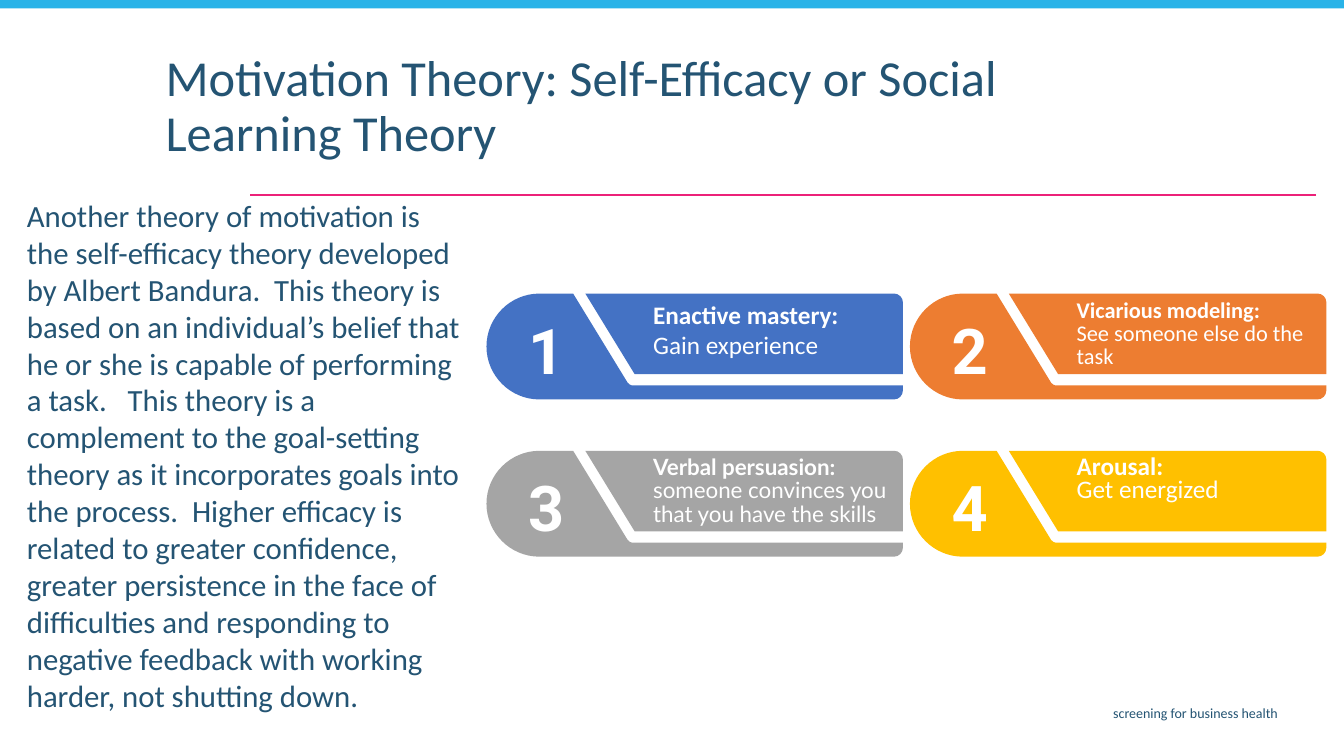
import dataclasses

import pptx
import pptx.dml.color
import pptx.enum.shapes
import pptx.enum.text
import pptx.oxml.ns
import pptx.util
from lxml import etree

# The slide is a grid of 160 columns by 90 rows of square cells
COLUMNS, ROWS = 160, 90
SLIDE_WIDTH, SLIDE_HEIGHT = pptx.util.Inches(13.33), pptx.util.Inches(7.5)
CELL = SLIDE_HEIGHT / ROWS
NAVY, SKY, PINK, WHITE = "245473", "29B3E8", "EC2179", "FFFFFF"
ALIGN = pptx.enum.text.PP_ALIGN

# Cards, in cells
CARD_LEFT, CARD_TOP = 57.9, 34.95
COLUMN_PITCH, ROW_PITCH = 50.4, 18.72
CARD_WIDTH, CARD_HEIGHT = 49.56, 12.6
CORNER = 1.05
CURVE = 0.55  # share of a quarter circle's radius taken by its control points

Point = tuple[float, float]
Segment = list[Point]  # one point for a line, three for a curve


@dataclasses.dataclass
class TextBox:
    left: float
    top: float
    width: float
    height: float
    runs: list[tuple[str, bool]]  # one run a line: text, bold
    size: float
    font: str = "Calibri"
    color: str = NAVY
    align: ALIGN = ALIGN.LEFT
    line_spacing: float | pptx.util.Length | None = None
    wrap: bool = True


@dataclasses.dataclass
class Card:
    heading: str
    detail: str
    color: str
    size: float
    font: str = "Calibri"
    line_spacing: pptx.util.Length | None = pptx.util.Pt(16.6)
    text_width: float = 29.4


TEXTS = [
    TextBox(43.7, 83.28, 109.56, 3.48, [("screening for business health", False)], 10,
            align=ALIGN.RIGHT),
    TextBox(18.52, 5.76, 123, 9.12,
            [("Motivation Theory: Self-Efficacy or Social Learning Theory", False)],
            36, line_spacing=0.9),
    TextBox(2.02, 22.8, 54.7, 63.24, [(
        "Another theory of motivation is the self-efficacy theory developed by Albert "
        "Bandura.  This theory is based on an individual’s belief that he or she is "
        "capable of performing a task.   This theory is a complement to the goal-setting "
        "theory as it incorporates goals into the process.  Higher efficacy is related to "
        "greater confidence, greater persistence in the face of difficulties and "
        "responding to negative feedback with working harder, not shutting down.",
        False)], 22),
]

CARDS = [
    Card("Enactive mastery:", "Gain experience", "4472C4", 18, line_spacing=None),
    Card("Vicarious modeling:", "See someone else do the task", "ED7D31", 16),
    Card("Verbal persuasion:", "someone convinces you that you have the skills",
         "A5A5A5", 16, font="Lato", text_width=32.4),
    Card("Arousal:", "Get energized", "FFC000", 18),
]


def cells(count: float) -> pptx.util.Emu:
    return pptx.util.Emu(round(count * CELL))


def rgb(color: str) -> pptx.dml.color.RGBColor:
    return pptx.dml.color.RGBColor.from_string(color)


def set_attributes(target: object, values: dict[str, object]) -> None:
    for name, value in values.items():
        setattr(target, name, value)


def paint(shape, color: str) -> None:
    shape.shadow.inherit = False
    shape.fill.solid()
    shape.fill.fore_color.rgb = rgb(color)
    shape.line.fill.background()


def add_text(slide, box: TextBox) -> None:
    shape = slide.shapes.add_textbox(
        cells(box.left), cells(box.top), cells(box.width), cells(box.height))
    shape.text_frame.word_wrap = box.wrap
    paragraph = shape.text_frame.paragraphs[0]
    set_attributes(paragraph, {"alignment": box.align, "line_spacing": box.line_spacing})
    for index, (text, bold) in enumerate(box.runs):
        if index:
            paragraph.add_line_break()
        run = paragraph.add_run()
        run.text = text
        set_attributes(run.font, {
            "name": box.font, "size": pptx.util.Pt(box.size), "bold": bold})
        run.font.color.rgb = rgb(box.color)


def quarter(start: Point, corner: Point, end: Point) -> Segment:
    """Curve of a quarter circle that rounds off a corner."""
    controls = [tuple(a + CURVE * (c - a) for a, c in zip(anchor, corner))
                for anchor in (start, end)]
    return [*controls, end]


def add_outline(slide, left: float, top: float, segments: list[Segment],
                color: str) -> None:
    placed = [(cells(left + x), cells(top + y)) for segment in segments for x, y in segment]
    builder = slide.shapes.build_freeform(*placed[0])
    builder.add_line_segments(placed[1:], close=True)
    shape = builder.convert_to_shape()
    paint(shape, color)
    # Merge the three points of each curve into one Bezier command
    lines = iter(list(shape._element.iter(pptx.oxml.ns.qn("a:lnTo"))))
    for segment in segments[1:]:
        commands = [next(lines) for _ in segment]
        if len(commands) == 3:
            curve = etree.Element(pptx.oxml.ns.qn("a:cubicBezTo"))
            commands[0].addprevious(curve)
            for command in commands:
                curve.append(command[0])
                command.getparent().remove(command)


def add_card(slide, index: int, card: Card) -> None:
    row, column = divmod(index, 2)
    left, top = CARD_LEFT + column * COLUMN_PITCH, CARD_TOP + row * ROW_PITCH
    width, height, radius = CARD_WIDTH, CARD_HEIGHT, CARD_HEIGHT / 2
    corner_x, corner_y = width - CORNER, height - CORNER

    # Text panel, then the rounded number tab with its lower strip
    panel = [[(17.64, 9.6)], [(width, 9.6)], [(width, CORNER)],
             quarter((width, CORNER), (width, 0), (corner_x, 0)), [(11.76, 0)]]
    tab = [[(17.28, 10.92)],
           [(17.15, 10.92), (16.95, 10.8), (16.8, 10.6)],
           [(10.32, 0)], [(radius, 0)],
           quarter((radius, 0), (0, 0), (0, radius)),
           quarter((0, radius), (0, height), (radius, height)),
           [(corner_x, height)],
           quarter((corner_x, height), (width, height), (width, corner_y)),
           [(width, 10.92)]]
    for segments in (panel, tab):
        add_outline(slide, left, top, segments, card.color)

    add_text(slide, TextBox(left + 3.78, top + 1.53, 6.6, 10.32, [(str(index + 1), True)],
                            45, "Roboto", WHITE, ALIGN.CENTER, wrap=False))
    add_text(slide, TextBox(left + 18.66, top + 0.12, card.text_width, 9,
                            [(card.heading, True), (card.detail, False)], card.size,
                            card.font, WHITE, line_spacing=card.line_spacing))


def add_frame(slide) -> None:
    # Rule under the title
    rule = slide.shapes.add_connector(
        pptx.enum.shapes.MSO_CONNECTOR.STRAIGHT,
        cells(156.65), cells(23.2), cells(29.76), cells(23.2))
    rule.line.color.rgb = rgb(PINK)
    rule.line.width = pptx.util.Pt(1.5)
    etree.SubElement(rule._element.spPr, pptx.oxml.ns.qn("a:effectLst"))
    # Band along the top edge
    band = slide.shapes.add_shape(
        pptx.enum.shapes.MSO_SHAPE.RECTANGLE, 0, 0, SLIDE_WIDTH, cells(1))
    paint(band, SKY)


def main() -> None:
    presentation = pptx.Presentation()
    set_attributes(presentation, {"slide_width": SLIDE_WIDTH, "slide_height": SLIDE_HEIGHT})
    slide = presentation.slides.add_slide(presentation.slide_layouts[6])
    add_frame(slide)
    for box in TEXTS:
        add_text(slide, box)
    for index, card in enumerate(CARDS):
        add_card(slide, index, card)
    presentation.save("out.pptx")


if __name__ == "__main__":
    main()
